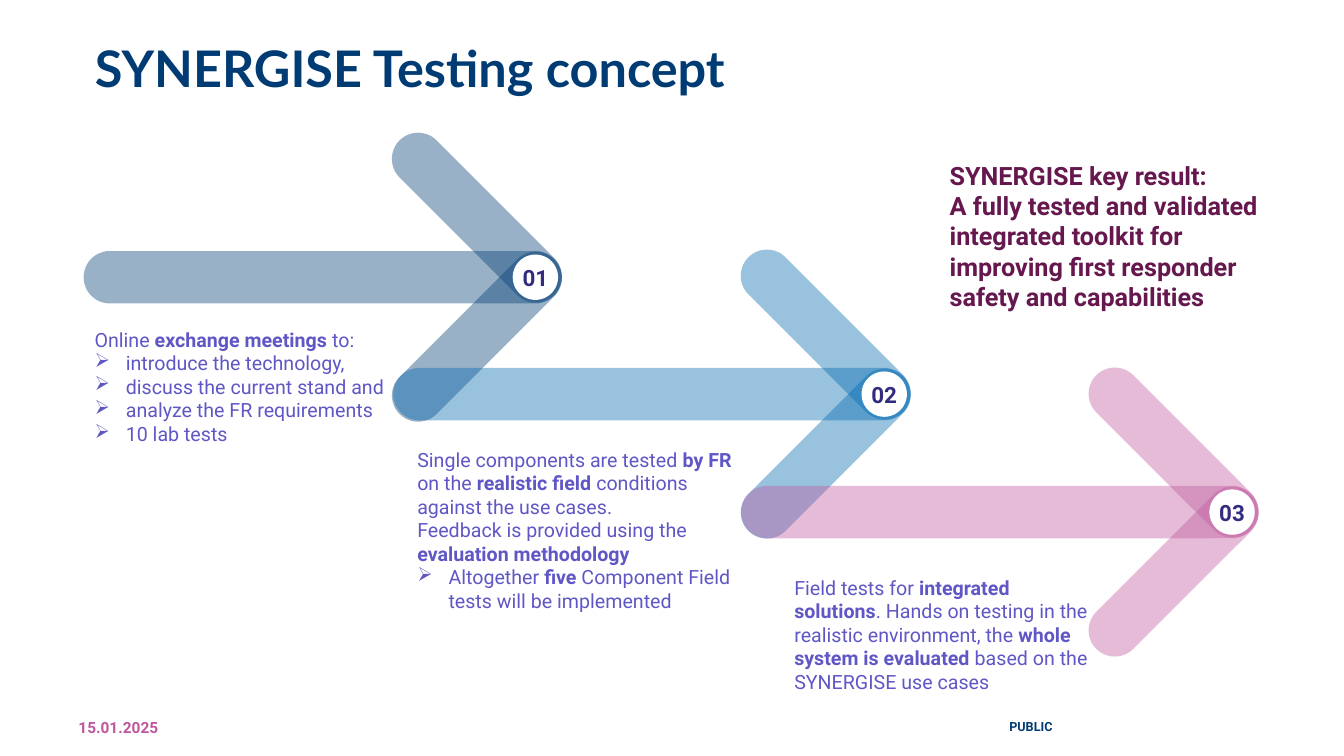
from lxml.etree import SubElement
from pptx import Presentation
from pptx.dml.color import RGBColor
from pptx.enum.shapes import MSO_SHAPE as Shape
from pptx.enum.text import MSO_ANCHOR as Anchor, MSO_AUTO_SIZE as AutoSize, PP_ALIGN as Align
from pptx.oxml.ns import qn
from pptx.util import Inches, Pt

COLORS = {"navy": "003C73", "blue": "0068B1", "pink": "BF579D", "white": "FFFFFF",
          "number": "322C7F", "body": "5F57C5", "result": "65174E"}

TITLE = "SYNERGISE Testing concept"

# number, colour, left end, right tip, centre height
ARROWS = [
    ("01", "navy", 0.83, 5.57, 2.75),
    ("02", "blue", 3.9, 9.03, 3.91),
    ("03", "pink", 7.35, 12.48, 5.08),
]

FORMATS = {
    "title": {"name": "Lato", "size": Pt(36), "bold": True, "color": "navy"},
    "number": {"name": "Roboto", "size": Pt(16), "bold": True, "color": "number"},
    "body": {"name": "Roboto", "size": Pt(14), "bold": False, "color": "body"},
    "result": {"name": "Roboto", "size": Pt(18), "bold": True, "color": "result"},
    "date": {"name": "Roboto", "size": Pt(11), "bold": True, "color": "pink"},
    "label": {"name": "Roboto", "size": Pt(9), "bold": True, "color": "navy"},
}

# format, box, alignment, anchor, paragraphs; "> " starts a bullet, "*" encloses bold words
TEXTS = [
    ("label", (9.06, 7.08, 2.33, 0.25), Align.CENTER, Anchor.TOP, ["PUBLIC"]),
    ("date", (0.68, 7.02, 3, 0.4), Align.LEFT, Anchor.MIDDLE, ["15.01.2025"]),
    ("body", (0.84, 3.2, 3.5, 1.28), Align.LEFT, Anchor.TOP, [
        "Online *exchange meetings *to:",
        "> introduce the technology,",
        "> discuss the current stand and",
        "> analyze the FR requirements",
        "> 10 lab tests"]),
    ("body", (4.04, 4.39, 3.38, 1.75), Align.LEFT, Anchor.TOP, [
        "Single components are tested *by FR *on the *realistic field *conditions "
        "against the use cases.",
        "Feedback is provided using the *evaluation methodology*",
        "> Altogether *five* Component Field tests will be implemented"]),
    ("body", (7.78, 5.66, 3.13, 1.28), Align.LEFT, Anchor.TOP, [
        "Field tests for *integrated solutions*. Hands on testing in the realistic "
        "environment, the *whole system is evaluated *based on the SYNERGISE use cases"]),
    ("result", (9.32, 1.54, 3.57, 1.62), Align.LEFT, Anchor.TOP, [
        "SYNERGISE key result:",
        "A fully tested and validated integrated toolkit for improving first responder "
        "safety and capabilities"]),
]

BAR_HEIGHT = 0.52
HEAD_LENGTH = 2.17
HEAD_BACK, HEAD_RISE = 0.84, 0.59   # from the tip to the centre of each head stroke
CIRCLE, CIRCLE_BACK = 0.45, 0.26    # diameter, and distance from the tip to the centre
OPACITY = 40
BULLET, BULLET_INDENT = "➢", Inches(0.31)


def rgb(color):
    return RGBColor.from_string(COLORS[color])


def add_run(paragraph, text, format_name, **changes):
    run = paragraph.add_run()
    run.text = text
    for key, value in {**FORMATS[format_name], **changes}.items():
        if key == "color":
            run.font.color.rgb = rgb(value)
        else:
            setattr(run.font, key, value)


def add_bullet(paragraph):
    properties = paragraph._p.get_or_add_pPr()
    properties.set("marL", str(BULLET_INDENT))
    properties.set("indent", str(-BULLET_INDENT))
    SubElement(properties, qn("a:buChar")).set("char", BULLET)


def add_centred(slide, kind, centre_x, centre_y, width, height, color):
    shape = slide.shapes.add_shape(
        kind, Inches(centre_x - width / 2), Inches(centre_y - height / 2),
        Inches(width), Inches(height))
    shape.shadow.inherit = False
    shape.fill.solid()
    shape.fill.fore_color.rgb = rgb(color)
    shape.line.fill.background()
    return shape


def add_stroke(slide, centre_x, centre_y, length, color, rotation=0):
    """Draw one translucent bar with round ends."""
    stroke = add_centred(slide, Shape.ROUNDED_RECTANGLE, centre_x, centre_y,
                         length, BAR_HEIGHT, color)
    stroke.adjustments[0] = 0.5
    stroke.rotation = rotation
    fill_color = stroke._element.spPr.find(qn("a:solidFill"))[0]
    SubElement(fill_color, qn("a:alpha")).set("val", str(OPACITY * 1000))


def add_arrow(slide, number, color, left, tip, middle):
    add_stroke(slide, (left + tip) / 2, middle, tip - left, color)
    for side, rotation in ((-1, 45), (1, 135)):
        add_stroke(slide, tip - HEAD_BACK, middle + side * HEAD_RISE,
                   HEAD_LENGTH, color, rotation)
    circle = add_centred(slide, Shape.OVAL, tip - CIRCLE_BACK, middle,
                         CIRCLE, CIRCLE, "white")
    frame = circle.text_frame
    frame.margin_left = frame.margin_right = 0
    frame.vertical_anchor = Anchor.MIDDLE
    paragraph = frame.paragraphs[0]
    paragraph.alignment = Align.CENTER
    add_run(paragraph, number, "number")


def add_text(slide, format_name, box, alignment, anchor, lines):
    frame = slide.shapes.add_textbox(*map(Inches, box)).text_frame
    frame.word_wrap = True
    frame.vertical_anchor = anchor
    if anchor == Anchor.TOP:
        frame.auto_size = AutoSize.SHAPE_TO_FIT_TEXT
    for index, line in enumerate(lines):
        paragraph = frame.add_paragraph() if index else frame.paragraphs[0]
        paragraph.alignment = alignment
        if line.startswith("> "):
            add_bullet(paragraph)
            line = line[2:]
        for part, words in enumerate(line.split("*")):
            if words:
                bold = part % 2 == 1 or FORMATS[format_name]["bold"]
                add_run(paragraph, words, format_name, bold=bold)


def add_title(slide):
    title = slide.shapes.title
    title.left, title.top, title.width, title.height = map(Inches, (0.84, 0.28, 11.88, 0.85))
    title.text_frame.vertical_anchor = Anchor.MIDDLE
    paragraph = title.text_frame.paragraphs[0]
    paragraph.alignment = Align.LEFT
    paragraph.line_spacing = 0.9
    add_run(paragraph, TITLE, "title")


def main():
    presentation = Presentation()
    presentation.slide_width, presentation.slide_height = Inches(13.33), Inches(7.5)
    slide = presentation.slides.add_slide(presentation.slide_layouts[5])
    add_title(slide)
    for arrow in ARROWS:
        add_arrow(slide, *arrow)
    for text in TEXTS:
        add_text(slide, *text)
    presentation.save("out.pptx")


if __name__ == "__main__":
    main()
